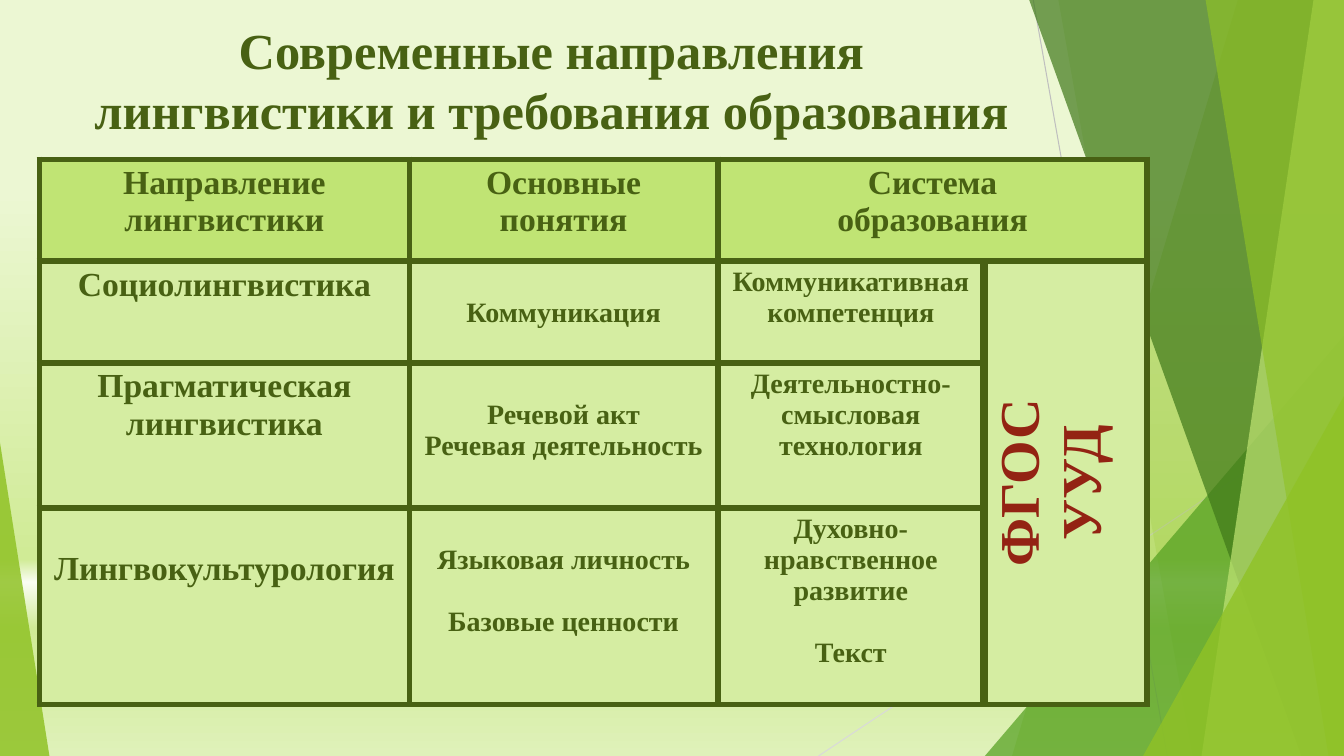
import pptx
import pptx.dml.color
import pptx.enum.dml
import pptx.enum.shapes
import pptx.enum.text
import pptx.oxml
import pptx.oxml.ns
import pptx.util

qn = pptx.oxml.ns.qn
SHAPE = pptx.enum.shapes.MSO_SHAPE
FONT = "Times New Roman"
OLIVE, LIME, LEAF = "486113", "90C226", "54A021"
PALE, HEADER, RED = "D5EDA2", "C0E474", "932313"
LINE_HEIGHT = 1.107


def rgb(value):
    return pptx.dml.color.RGBColor.from_string(value)


def write(tf, text, size=20, color=OLIVE, gap=0):
    for i, line in enumerate(text.split("\n")):
        p = tf.paragraphs[0] if i == 0 else tf.add_paragraph()
        p.alignment = pptx.enum.text.PP_ALIGN.CENTER
        if i and gap:
            p.space_before = pptx.util.Pt(gap)
        r = p.add_run()
        r.text = line
        r.font.name = FONT
        r.font.size = pptx.util.Pt(size)
        r.font.bold = True
        r.font.color.rgb = rgb(color)


def set_border(cell, widths, color=OLIVE):
    tc_pr = cell._tc.get_or_add_tcPr()
    for i, (side, width) in enumerate(zip("LRTB", widths)):
        ln = pptx.oxml.parse_xml(
            f'<a:ln{side} xmlns:a="http://schemas.openxmlformats.org/drawingml/2006/main" '
            f'w="{pptx.util.Pt(width)}"><a:solidFill><a:srgbClr val="{color}"/>'
            f'</a:solidFill></a:ln{side}>')
        tc_pr.insert(i, ln)


class Deck:
    def __init__(self, width, height):
        self.prs = pptx.Presentation()
        self.prs.slide_width = pptx.util.Inches(width)
        self.prs.slide_height = pptx.util.Inches(height)
        self.s = self.prs.slides.add_slide(self.prs.slide_layouts[6])

    def x(self, percent):
        return round(self.prs.slide_width * percent / 100)

    def y(self, percent):
        return round(self.prs.slide_height * percent / 100)

    def box(self, left, top, width, height):
        return self.x(left), self.y(top), self.x(width), self.y(height)

    def background(self, stops):
        fill = self.s.background.fill
        fill.gradient()
        fill.gradient_angle = 270
        gs_list = self.s.element.find(".//" + qn("a:gsLst"))
        for gs in list(gs_list):
            gs_list.remove(gs)
        for position, color in stops:
            gs = gs_list.makeelement(qn("a:gs"), {"pos": str(position * 1000)})
            gs.append(gs.makeelement(qn("a:srgbClr"), {"val": color}))
            gs_list.append(gs)

    def line(self, x1, y1, x2, y2, color):
        sp = self.s.shapes.add_connector(
            pptx.enum.shapes.MSO_CONNECTOR.STRAIGHT,
            self.x(x1), self.y(y1), self.x(x2), self.y(y2))
        sp.line.color.rgb = rgb(color)
        sp.line.width = pptx.util.Pt(0.75)
        sp_pr = sp._element.spPr
        sp_pr.append(sp_pr.makeelement(qn("a:effectLst"), {}))

    def paint(self, sp, color, opacity):
        sp.shadow.inherit = False
        sp.fill.solid()
        sp.fill.fore_color.rgb = rgb(color)
        sp.line.fill.background()
        clr = sp._element.spPr.find(qn("a:solidFill"))[0]
        clr.append(clr.makeelement(qn("a:alpha"), {"val": str(opacity * 1000)}))

    def band(self, top_x, bottom_x, color, opacity):
        builder = self.s.shapes.build_freeform(self.x(top_x), 0)
        corners = [(100, 0), (100, 100), (bottom_x, 100)]
        builder.add_line_segments([(self.x(x), self.y(y)) for x, y in corners])
        self.paint(builder.convert_to_shape(), color, opacity)

    def triangle(self, left, top, width, apex, color, opacity):
        sp = self.s.shapes.add_shape(
            SHAPE.ISOSCELES_TRIANGLE, *self.box(left, top, width, 100 - top))
        sp.adjustments[0] = apex
        self.paint(sp, color, opacity)

    def text(self, left, top, width, height, text, **style):
        tf = self.s.shapes.add_textbox(*self.box(left, top, width, height)).text_frame
        tf.word_wrap = True
        write(tf, text, **style)

    def table(self, left, top, columns, rows):
        frame = self.s.shapes.add_table(
            len(rows), len(columns),
            *self.box(left, top, sum(columns), sum(rows)))
        table = frame.table
        for column, width in zip(table.columns, columns):
            column.width = self.x(width)
        for row, height in zip(table.rows, rows):
            row.height = self.y(height)
        return table

    def cell(self, cell, text, skip=0, **style):
        cell.margin_top = pptx.util.Inches(0.05) + pptx.util.Pt(skip * LINE_HEIGHT)
        write(cell.text_frame, text, **style)


def main():
    deck = Deck(13.33, 7.5)
    deck.background([(25, "ECF7D3"), (74, "D0EB96"), (77, "FAFDF3"),
                     (83, "D0EB96"), (100, "DFF1B9")])
    deck.line(76.88, 0, 86.85, 100, "BFBFBF")
    deck.line(100, 53.73, 60.9, 100, "D9D9D9")
    deck.band(92.1, 75.3, LIME, 30)
    deck.band(78.75, 88.73, LIME, 20)
    deck.triangle(73.28, 44.4, 26.72, 1, LEAF, 72)
    deck.band(76.58, 96.83, "3F7819", 70)
    deck.band(97.73, 89.4, HEADER, 70)
    deck.band(89.7, 98.85, LIME, 65)
    deck.triangle(85.05, 52.4, 14.95, 1, LIME, 80)
    deck.triangle(0, 58.53, 3.68, 0, LIME, 85)

    deck.text(5.78, 1.87, 70.5, 19.2,
              "Современные направления лингвистики и требования образования", size=36)

    table = deck.table(2.93, 21.07, [27.53, 22.95, 19.8, 12.15],
                       [13.47, 13.47, 19.2, 26])
    for row in range(4):
        for col in range(4):
            cell = table.cell(row, col)
            cell.fill.solid()
            cell.fill.fore_color.rgb = rgb(PALE if row else HEADER)
            left = 6 if row and col == 3 else 4.5
            right = 6 if row and col == 2 else 4.5
            set_border(cell, (left, right, 4.5, 4.5))
    table.cell(0, 2).merge(table.cell(0, 3))
    table.cell(1, 3).merge(table.cell(3, 3))

    headers = ["Направление лингвистики", "Основные\nпонятия", "Система\nобразования"]
    for col, header in enumerate(headers):
        deck.cell(table.cell(0, col), header, size=24)

    directions = [
        ("Социолингвистика", "Коммуникация", "Коммуникативная компетенция"),
        ("Прагматическая лингвистика", "Речевой акт\nРечевая деятельность",
         "Деятельностно-смысловая технология"),
        ("Лингвокультурология", "Языковая личность\nБазовые ценности",
         "Духовно-нравственное развитие\nТекст"),
    ]
    for row, (direction, concepts, education) in enumerate(directions, 1):
        last = row == len(directions)
        gap = 20 * LINE_HEIGHT if last else 0
        deck.cell(table.cell(row, 0), direction, skip=24 if last else 0, size=24)
        deck.cell(table.cell(row, 1), concepts, skip=20, gap=gap)
        deck.cell(table.cell(row, 2), education, gap=gap)

    standard = table.cell(1, 3)
    deck.cell(standard, "ФГОС\nУУД", size=40, color=RED)
    standard._tc.get_or_add_tcPr().set("vert", "vert270")

    deck.prs.save("out.pptx")


if __name__ == "__main__":
    main()
